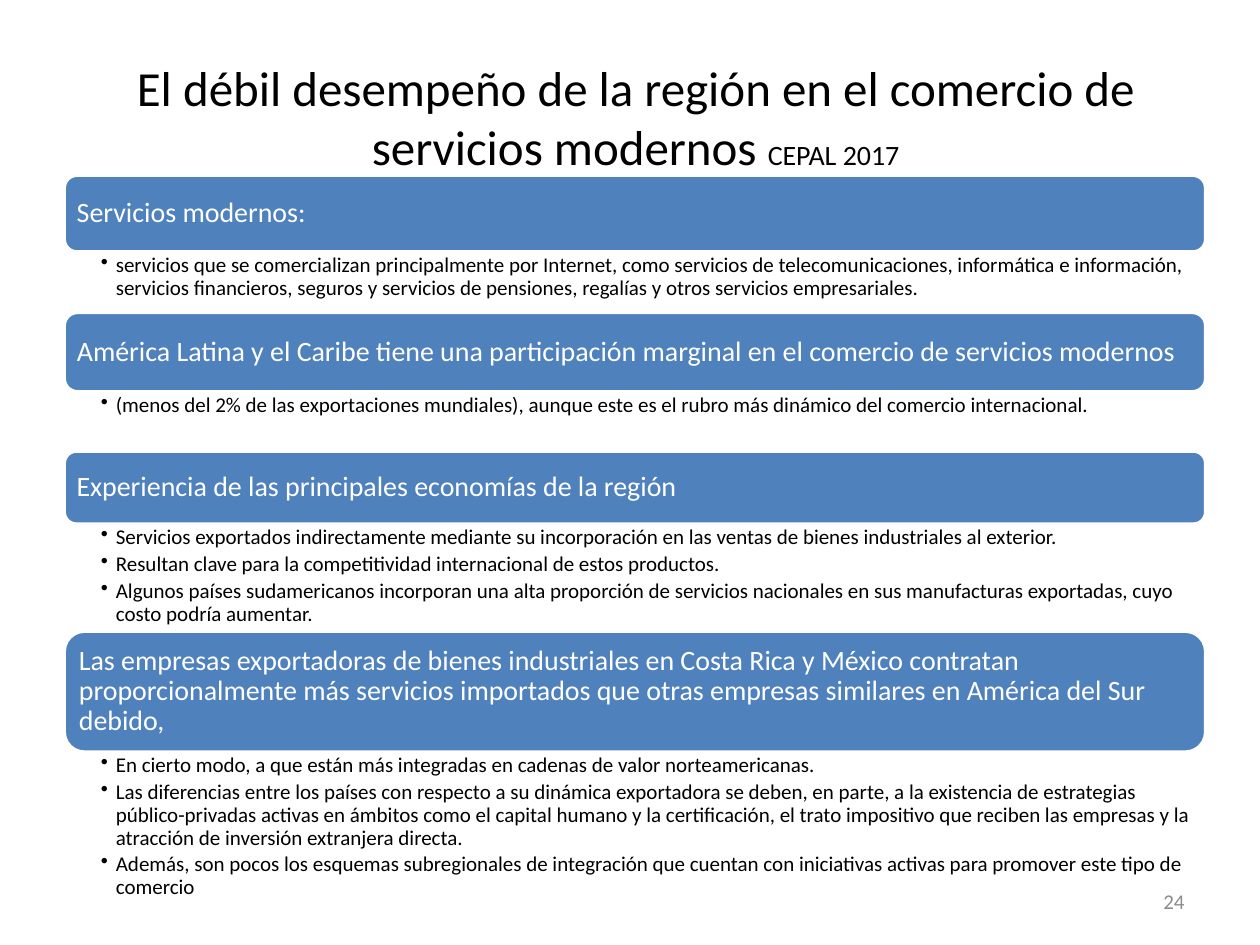
import pptx
import pptx.util
import pptx.dml.color
import pptx.enum.shapes
import pptx.enum.text
import pptx.oxml.ns
import lxml.etree

Inches = pptx.util.Inches
Pt = pptx.util.Pt
RGBColor = pptx.dml.color.RGBColor
ALIGN = pptx.enum.text.PP_ALIGN
ANCHOR = pptx.enum.text.MSO_ANCHOR

BLUE = RGBColor(0x4F, 0x81, 0xBD)
WHITE = RGBColor(0xFF, 0xFF, 0xFF)
BLACK = RGBColor(0x00, 0x00, 0x00)
GRAY = RGBColor(0x8C, 0x8C, 0x8C)

LEFT, TOP, WIDTH = 0.51, 1.39, 9.06

SECTIONS = [
    (0.61, "Servicios modernos:", 0.48, [
        "servicios que se comercializan principalmente por Internet, como servicios de telecomunicaciones, "
        "informática e información, servicios financieros, seguros y servicios de pensiones, regalías y otros "
        "servicios empresariales.",
    ]),
    (0.63, "América Latina y el Caribe tiene una participación marginal en el comercio de servicios modernos", 0.47, [
        "(menos del 2% de las exportaciones mundiales), aunque este es el rubro más dinámico del comercio "
        "internacional.",
    ]),
    (0.58, "Experiencia de las principales economías de la región", 0.85, [
        "Servicios exportados indirectamente mediante su incorporación en las ventas de bienes industriales al "
        "exterior.",
        "Resultan clave para la competitividad internacional de estos productos.",
        "Algunos países sudamericanos incorporan una alta proporción de servicios nacionales en sus manufacturas "
        "exportadas, cuyo costo podría aumentar.",
    ]),
    (0.96, "Las empresas exportadoras de bienes industriales en Costa Rica y México contratan proporcionalmente más "
           "servicios importados que otras empresas similares en América del Sur debido,", 1.24, [
        "En cierto modo, a que están más integradas en cadenas de valor norteamericanas.",
        "Las diferencias entre los países con respecto a su dinámica exportadora se deben, en parte, a la existencia "
        "de estrategias público-privadas activas en ámbitos como el capital humano y la certificación, el trato "
        "impositivo que reciben las empresas y la atracción de inversión extranjera directa.",
        "Además, son pocos los esquemas subregionales de integración que cuentan con iniciativas activas para "
        "promover este tipo de comercio",
    ]),
]


def apply(obj, values):
    for name, value in values.items():
        setattr(obj, name, value)


def margins(left, top, right, bottom):
    return {"margin_left": Inches(left), "margin_top": Inches(top),
            "margin_right": Inches(right), "margin_bottom": Inches(bottom)}


class Deck:
    font = "Calibri"
    header_frame = {"word_wrap": True, "vertical_anchor": ANCHOR.MIDDLE, **margins(0.07, 0.07, 0.07, 0.07)}
    header_par = {"alignment": ALIGN.LEFT, "line_spacing": 0.9, "space_after": Pt(5.6)}
    list_frame = {"word_wrap": True, "vertical_anchor": ANCHOR.TOP, **margins(0.29, 0.02, 0.09, 0.02)}
    list_par = {"level": 1, "line_spacing": 0.9, "space_after": Pt(2.4)}

    def __init__(self):
        self.prs = pptx.Presentation()
        apply(self.prs, {"slide_width": Inches(10), "slide_height": Inches(7.5)})
        self.s = self.prs.slides.add_slide(self.prs.slide_layouts[5])

    def run(self, p, text, size, color):
        r = p.add_run()
        r.text = text
        apply(r.font, {"name": self.font, "size": Pt(size)})
        r.font.color.rgb = color

    def title(self, box, parts):
        sp = self.s.shapes.title
        apply(sp, dict(zip(("left", "top", "width", "height"), map(Inches, box))))
        apply(sp.text_frame, {"word_wrap": True, "vertical_anchor": ANCHOR.MIDDLE})
        p = sp.text_frame.paragraphs[0]
        p.alignment = ALIGN.CENTER
        for text, size in parts:
            self.run(p, text, size, BLACK)

    def header(self, box, text):
        kind = pptx.enum.shapes.MSO_SHAPE.ROUNDED_RECTANGLE
        sp = self.s.shapes.add_shape(kind, *map(Inches, box))
        sp.shadow.inherit = False
        sp.fill.solid()
        sp.fill.fore_color.rgb = BLUE
        sp.line.color.rgb = WHITE
        sp.line.width = Pt(2)
        apply(sp.text_frame, self.header_frame)
        p = sp.text_frame.paragraphs[0]
        apply(p, self.header_par)
        self.run(p, text, 16, WHITE)

    def bullets(self, box, items):
        tf = self.s.shapes.add_textbox(*map(Inches, box)).text_frame
        apply(tf, self.list_frame)
        for i, item in enumerate(items):
            p = tf.add_paragraph() if i else tf.paragraphs[0]
            apply(p, self.list_par)
            pPr = p._p.get_or_add_pPr()
            pPr.set("marL", str(Inches(0.12)))
            pPr.set("indent", str(-Inches(0.12)))
            lxml.etree.SubElement(pPr, pptx.oxml.ns.qn("a:buChar")).set("char", "•")
            self.run(p, item, 12, BLACK)

    def page_number(self, box, number):
        tf = self.s.shapes.add_textbox(*map(Inches, box)).text_frame
        apply(tf, {"word_wrap": True, "vertical_anchor": ANCHOR.MIDDLE})
        p = tf.paragraphs[0]
        p.alignment = ALIGN.RIGHT
        self.run(p, number, 12, GRAY)


def main():
    deck = Deck()
    deck.title((0.28, 0.3, 9.53, 1.25), [
        ("El débil desempeño de la región en el comercio de servicios modernos ", 28),
        ("CEPAL 2017", 16),
    ])
    top = TOP
    for header_height, header, list_height, items in SECTIONS:
        deck.header((LEFT, top, WIDTH, header_height), header)
        top += header_height
        deck.bullets((LEFT, top, WIDTH, list_height), items)
        top += list_height
    deck.page_number((7.17, 6.95, 2.33, 0.4), "24")
    deck.prs.save("out.pptx")


if __name__ == "__main__":
    main()
